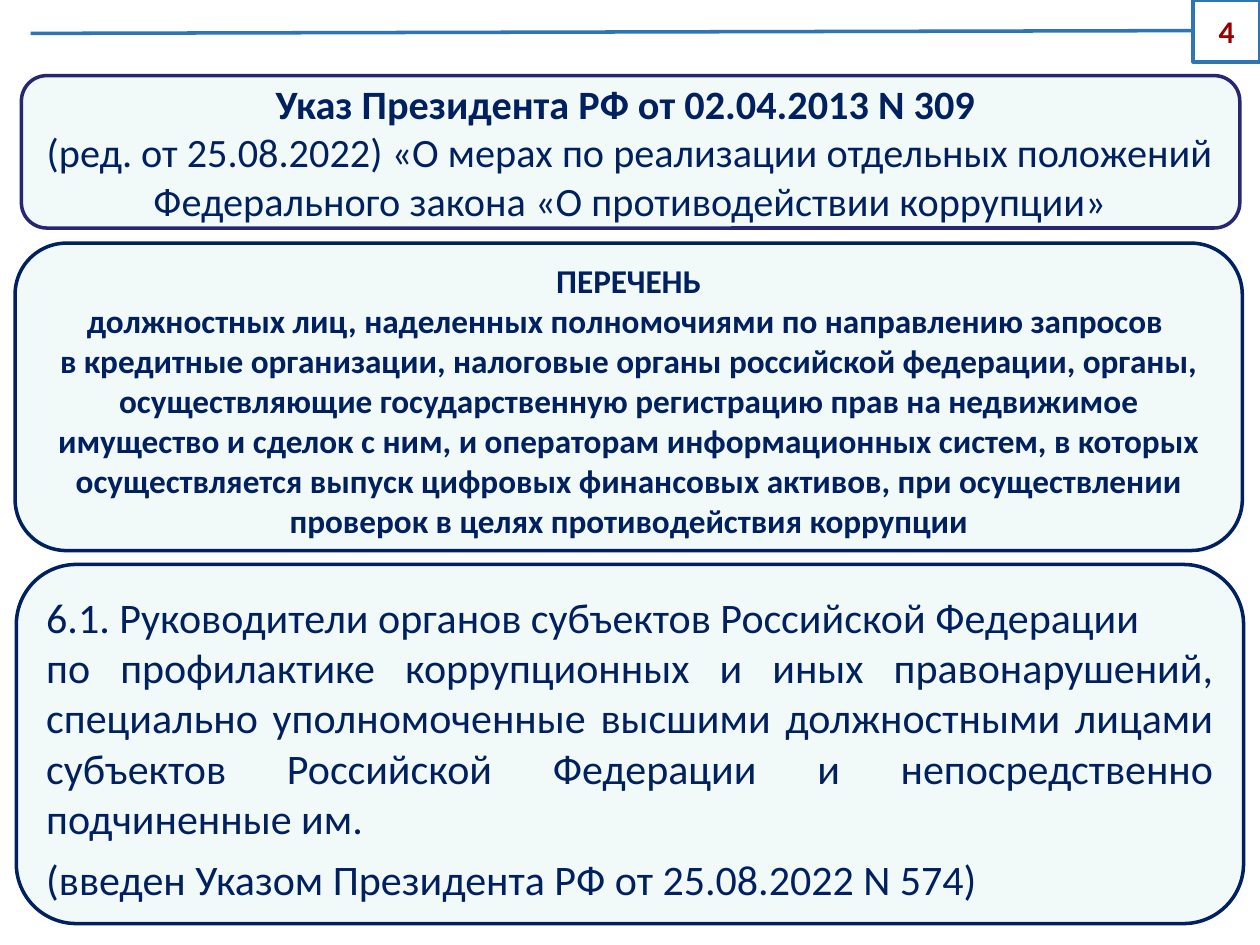
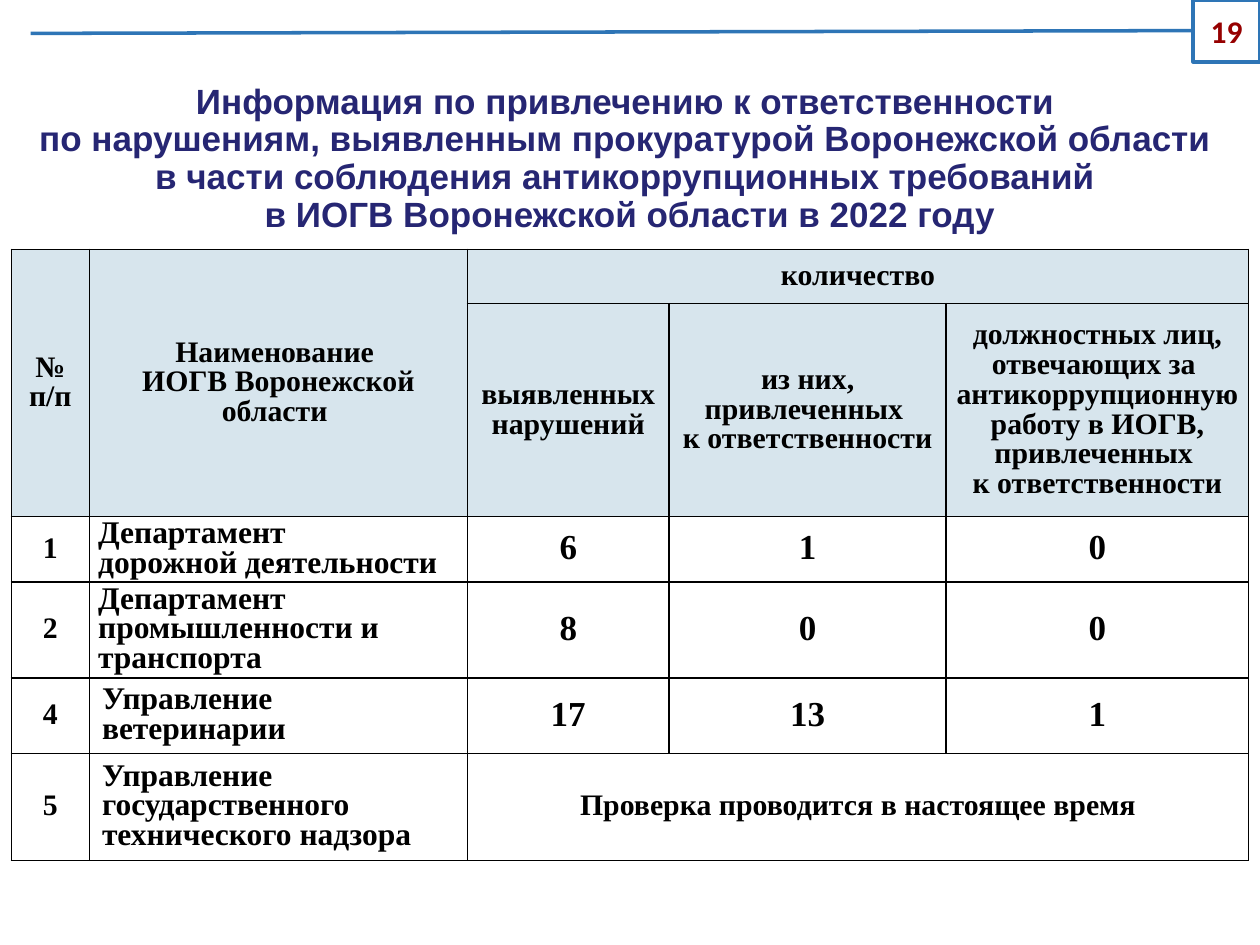
from pptx import Presentation
from pptx.dml.color import RGBColor
from pptx.enum.shapes import MSO_SHAPE as Preset
from pptx.enum.text import MSO_ANCHOR as Anchor, PP_ALIGN as Align
from pptx.oxml import parse_xml
from pptx.oxml.ns import nsdecls
from pptx.util import Pt

COLORS = {
    "white": "FFFFFF", "black": "000000", "panel": "F1F9F9", "header": "D7E5ED",
    "indigo": "262673", "navy": "002060", "rule": "2E75B6", "number": "960000",
}
TITLE_ONLY, BLANK = 5, 6
SLIDE_WIDTH, SLIDE_HEIGHT = 720, 540

# Table text: size, alignment, line spacing
CELL_STYLES = {
    "label": (17, Align.CENTER, 0.9),
    "name": (18, Align.LEFT, 0.85),
    "value": (20, Align.CENTER, 0.9),
}
COLUMN_WIDTHS = [44.64, 216, 115.2, 158.4, 172.8]
ROW_HEIGHTS = [30.96, 121.68, 37.44, 54.72, 43.2, 61.2]
HEADER_ROWS = 2
# Row, column, row span, column span, paragraphs
HEADER_CELLS = [
    (0, 0, 2, 1, ["№ п/п"]),
    (0, 1, 2, 1, ["Наименование ", "ИОГВ Воронежской области "]),
    (0, 2, 1, 3, ["количество"]),
    (1, 2, 1, 1, ["выявленных нарушений"]),
    (1, 3, 1, 1, ["из них, привлеченных ", "к ответственности"]),
    (1, 4, 1, 1, ["должностных лиц, отвечающих за ",
                  "антикоррупционную работу в ИОГВ, привлеченных ",
                  "к ответственности"]),
]
# Number, department, counts
DEPARTMENTS = [
    ("1", ["Департамент", "дорожной деятельности"], ["6", "1", "0"]),
    ("2", ["Департамент промышленности и транспорта"], ["8", "0", "0"]),
    ("4", ["Управление ветеринарии"], ["17", "13", "1"]),
    ("5", ["Управление государственного технического надзора"],
     ["Проверка проводится в настоящее время"]),
]


def rgb(name):
    return RGBColor.from_string(COLORS[name])


def add_run(paragraph, text, size, color, bold=False, font="Calibri"):
    run = paragraph.add_run()
    run.text = text
    run.font.size, run.font.name, run.font.bold = Pt(size), font, bold
    run.font.color.rgb = rgb(color)


def next_paragraph(frame, index):
    return frame.paragraphs[0] if index == 0 else frame.add_paragraph()


def set_margins(target, left, top, right, bottom):
    target.margin_left, target.margin_top = Pt(left), Pt(top)
    target.margin_right, target.margin_bottom = Pt(right), Pt(bottom)


def add_outlined_shape(slide, preset, box, line, fill=None):
    shape = slide.shapes.add_shape(preset, *map(Pt, box))
    shape.shadow.inherit = False
    if fill:
        shape.fill.solid()
        shape.fill.fore_color.rgb = rgb(fill)
    else:
        shape.fill.background()
    shape.line.color.rgb = rgb(line)
    shape.line.width = Pt(2)
    shape.text_frame.word_wrap = True
    shape.text_frame.vertical_anchor = Anchor.MIDDLE
    return shape


def add_page_number(slide, number):
    """Number box in the corner, whose callout line crosses the slide top."""
    width, height = 38.16, 35.28
    box = (SLIDE_WIDTH - width, 0, width, height)
    shape = add_outlined_shape(slide, Preset.LINE_CALLOUT_1, box, "rule")
    for index, value in enumerate([0.496, -0.011, 0.541, -17.411]):
        shape.adjustments[index] = value
    paragraph = shape.text_frame.paragraphs[0]
    paragraph.alignment = Align.CENTER
    add_run(paragraph, number, 18, "number", bold=True)


def add_panel(slide, box, line, size, paragraphs, align=Align.CENTER, top=3.6, bottom=3.6):
    """Rounded panel; each paragraph is text, bold, space before."""
    shape = add_outlined_shape(slide, Preset.ROUNDED_RECTANGLE, box, line, "panel")
    set_margins(shape.text_frame, 7.2, top, 7.2, bottom)
    for index, (text, bold, space) in enumerate(paragraphs):
        paragraph = next_paragraph(shape.text_frame, index)
        paragraph.alignment = align
        paragraph.space_before = Pt(space)
        add_run(paragraph, text, size, "navy", bold)


def add_title(slide, box, lines):
    title = slide.shapes.title
    title.left, title.top, title.width, title.height = map(Pt, box)
    frame = title.text_frame
    frame.word_wrap = True
    frame.vertical_anchor = Anchor.MIDDLE
    set_margins(frame, 7.2, 3.6, 7.2, 3.6)
    paragraph = frame.paragraphs[0]
    paragraph.alignment = Align.CENTER
    paragraph.line_spacing = 0.9
    for index, line in enumerate(lines):
        if index:
            paragraph.add_line_break()
        add_run(paragraph, line, 20, "indigo", bold=True, font="Arial")


def format_cell(cell, fill):
    """Black border on every side, then the fill."""
    properties = cell._tc.get_or_add_tcPr()
    for side in ("lnL", "lnR", "lnT", "lnB"):
        properties.append(parse_xml(
            f'<a:{side} {nsdecls("a")} w="{Pt(1)}"><a:solidFill>'
            f'<a:srgbClr val="{COLORS["black"]}"/></a:solidFill></a:{side}>'))
    cell.fill.solid()
    cell.fill.fore_color.rgb = rgb(fill)
    cell.vertical_anchor = Anchor.MIDDLE
    set_margins(cell, 5, 0, 5, 0)


def write_cell(cell, lines, style="label"):
    size, align, spacing = CELL_STYLES[style]
    for index, line in enumerate(lines):
        paragraph = next_paragraph(cell.text_frame, index)
        paragraph.alignment = align
        paragraph.line_spacing = spacing
        add_run(paragraph, line, size, "black", bold=True, font="Times New Roman")


def add_violations_table(slide, left, top):
    box = (left, top, sum(COLUMN_WIDTHS), sum(ROW_HEIGHTS))
    table = slide.shapes.add_table(
        len(ROW_HEIGHTS), len(COLUMN_WIDTHS), *map(Pt, box)).table
    table.first_row = table.horz_banding = False
    for column, width in zip(table.columns, COLUMN_WIDTHS):
        column.width = Pt(width)
    for index, (row, height) in enumerate(zip(table.rows, ROW_HEIGHTS)):
        row.height = Pt(height)
        for cell in row.cells:
            format_cell(cell, "header" if index < HEADER_ROWS else "white")

    # Header
    for row, column, row_span, column_span, lines in HEADER_CELLS:
        cell = table.cell(row, column)
        if row_span > 1 or column_span > 1:
            cell.merge(table.cell(row + row_span - 1, column + column_span - 1))
        if row_span > 1:
            set_margins(cell, 7.2, 3.6, 7.2, 3.6)
        write_cell(cell, lines)

    # Departments
    for row, (number, name, counts) in enumerate(DEPARTMENTS, HEADER_ROWS):
        write_cell(table.cell(row, 0), [number])
        name_cell = table.cell(row, 1)
        write_cell(name_cell, name, "name")
        if name[0].startswith("Управление"):
            set_margins(name_cell, 7.2, 3.6, 7.2, 3.6)
        if len(counts) == 1:
            table.cell(row, 2).merge(table.cell(row, 4))
            write_cell(table.cell(row, 2), counts)
        else:
            for column, count in enumerate(counts, 2):
                write_cell(table.cell(row, column), [count], "value")


def build_decree_slide(presentation):
    slide = presentation.slides.add_slide(presentation.slide_layouts[BLANK])
    # Decree
    add_panel(slide, (12.24, 43.2, 696.24, 87.12), "indigo", 23, [
        ("Указ Президента РФ от 02.04.2013 N 309 ", True, 0),
        ("(ред. от 25.08.2022) «О мерах по реализации отдельных положений "
         "Федерального закона «О противодействии коррупции»", False, 0),
    ])
    # List of officials
    add_panel(slide, (8.64, 138.96, 701.28, 175.68), "navy", 19, [
        ("ПЕРЕЧЕНЬ", True, 0),
        ("должностных лиц, наделенных полномочиями по направлению запросов ", True, 0),
        ("в кредитные организации, налоговые органы российской федерации, органы, "
         "осуществляющие государственную регистрацию прав на недвижимое имущество "
         "и сделок с ним, и операторам информационных систем, в которых "
         "осуществляется выпуск цифровых финансовых активов, при осуществлении "
         "проверок в целях противодействия коррупции", True, 0),
    ], top=4, bottom=0)
    # Clause 6.1
    add_panel(slide, (9.36, 322.56, 701.28, 205.2), "navy", 24, [
        ("6.1. Руководители органов субъектов Российской Федерации ", False, 0),
        ("по профилактике коррупционных и иных правонарушений, специально "
         "уполномоченные высшими должностными лицами субъектов Российской "
         "Федерации и непосредственно подчиненные им.", False, 0),
        ("(введен Указом Президента РФ от 25.08.2022 N 574)", False, 6),
    ], Align.JUSTIFY, top=4, bottom=0)
    add_page_number(slide, "4")


def build_violations_slide(presentation):
    slide = presentation.slides.add_slide(presentation.slide_layouts[TITLE_ONLY])
    add_title(slide, (0, 39.6, SLIDE_WIDTH, 102.96), [
        "Информация по привлечению к ответственности ",
        "по нарушениям, выявленным прокуратурой Воронежской области ",
        "в части соблюдения антикоррупционных требований ",
        "в ИОГВ Воронежской области в 2022 году",
    ])
    add_violations_table(slide, 6.48, 142.56)
    add_page_number(slide, "19")


def main():
    presentation = Presentation()
    presentation.slide_width, presentation.slide_height = Pt(SLIDE_WIDTH), Pt(SLIDE_HEIGHT)
    build_decree_slide(presentation)
    build_violations_slide(presentation)
    presentation.save("out.pptx")


if __name__ == "__main__":
    main()
